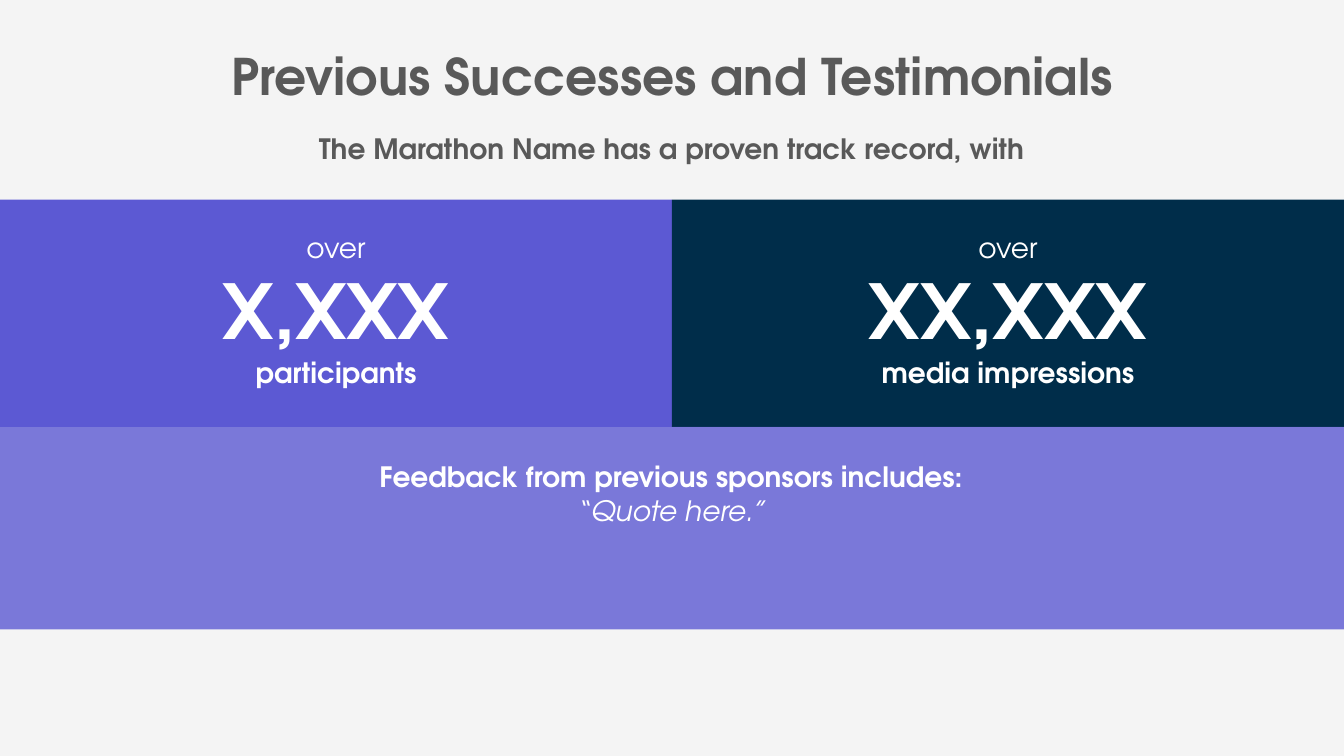
from lxml.etree import SubElement
from pptx import Presentation
from pptx.dml.color import RGBColor
from pptx.enum.shapes import MSO_SHAPE
from pptx.enum.text import MSO_ANCHOR, MSO_AUTO_SIZE, PP_ALIGN
from pptx.oxml.ns import qn
from pptx.util import Cm, Pt

BACKGROUND = RGBColor(0xF4, 0xF4, 0xF4)
GREY = RGBColor(0x59, 0x59, 0x59)
WHITE = RGBColor(0xFF, 0xFF, 0xFF)
VIOLET = RGBColor(0x5C, 0x59, 0xD3)
NAVY = RGBColor(0x00, 0x2D, 0x4A)

FONT = "TeX Gyre Adventor"
WIDTH, HEIGHT = 33.87, 19.05
HALF = WIDTH / 2
STATS_TOP, STATS_HEIGHT = 5.03, 5.73


class SlideBuilder:
    """Holds the text style and the current slide; lengths are in cm."""

    def __init__(self, slide, font):
        self.slide = slide
        self.font = font

    def background(self, color):
        fill = self.slide.background.fill
        fill.solid()
        fill.fore_color.rgb = color

    def panel(self, left, top, width, height, color, opacity=100):
        sp = self.slide.shapes.add_shape(
            MSO_SHAPE.RECTANGLE, Cm(left), Cm(top), Cm(width), Cm(height))
        sp.shadow.inherit = False
        sp.line.fill.background()
        sp.fill.solid()
        sp.fill.fore_color.rgb = color
        if opacity < 100:
            clr = sp.element.spPr.find(qn("a:solidFill"))[0]
            SubElement(clr, qn("a:alpha"), val=str(opacity * 1000))

    def title(self, text, left, top, width, height, color):
        sp = self.slide.shapes.title
        sp.left, sp.top, sp.width, sp.height = map(Cm, (left, top, width, height))
        self.set_text(sp.text_frame, [[(text, 36, True, False)]], color)

    def text(self, left, top, width, height, paragraphs, color):
        sp = self.slide.shapes.add_textbox(Cm(left), Cm(top), Cm(width), Cm(height))
        self.set_text(sp.text_frame, paragraphs, color)

    def set_text(self, tf, paragraphs, color):
        """Each paragraph is a list of lines: (text, size, bold, italic)."""
        tf.word_wrap = True
        tf.auto_size = MSO_AUTO_SIZE.SHAPE_TO_FIT_TEXT
        tf.vertical_anchor = MSO_ANCHOR.TOP
        for i, lines in enumerate(paragraphs):
            p = tf.add_paragraph() if i else tf.paragraphs[0]
            p.text = "\v".join(line[0] for line in lines)
            p.alignment = PP_ALIGN.CENTER
            for r, (_, size, bold, italic) in zip(p.runs, lines):
                r.font.name = self.font
                r.font.size = Pt(size)
                r.font.bold = bold
                r.font.italic = italic
                r.font.color.rgb = color


def main():
    prs = Presentation()
    prs.slide_width, prs.slide_height = Cm(WIDTH), Cm(HEIGHT)
    s = SlideBuilder(prs.slides.add_slide(prs.slide_layouts[5]), FONT)
    s.background(BACKGROUND)

    # Heading
    s.title("Previous Successes and Testimonials", 4.35, 1.02, 25.17, 1.8, GREY)
    s.text(6.4, 3.2, 21.06, 1.12,
           [[("The Marathon Name has a proven track record, with", 20, True, False)]],
           GREY)

    # Key figures, side by side
    stats = [("X,XXX", "participants", VIOLET),
             ("XX,XXX", "media impressions", NAVY)]
    for i, (figure, label, color) in enumerate(stats):
        s.panel(i * HALF, STATS_TOP, HALF, STATS_HEIGHT, color)
        s.text(i * HALF, 5.69, HALF, 4.27,
               [[("over", 20, False, False)],
                [(figure, 54, True, False), (label, 20, True, False)]],
               WHITE)

    # Sponsor feedback
    s.panel(0, STATS_TOP + STATS_HEIGHT, WIDTH, 5.1, VIOLET, opacity=80)
    s.text(7.16, 11.46, 19.51, 1.96,
           [[("Feedback from previous sponsors includes:", 20, True, False)],
            [("“Quote here.”", 20, False, True)]],
           WHITE)

    prs.save("out.pptx")


if __name__ == "__main__":
    main()
